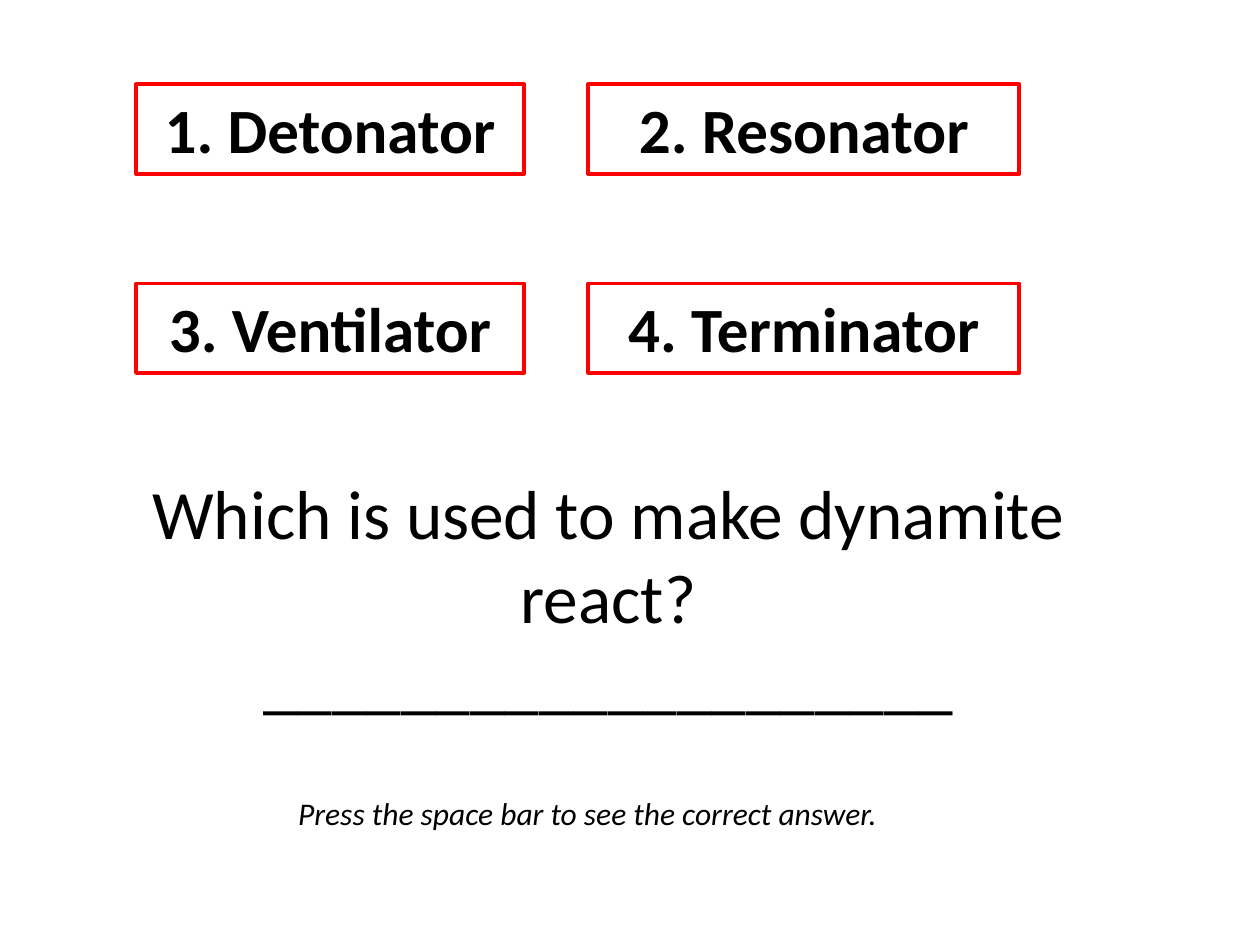
"""Build a quiz slide with four boxed answers, a question and a hint."""
from itertools import product

from pptx import Presentation
from pptx.dml.color import RGBColor
from pptx.enum.text import MSO_ANCHOR as Anchor, PP_ALIGN as Align
from pptx.util import Inches, Pt

BLACK = RGBColor(0, 0, 0)
RED = RGBColor(255, 0, 0)
FONT = "Calibri"

ANSWERS = ["1. Detonator", "2. Resonator", "3. Ventilator", "4. Terminator"]
QUESTION = "Which is used to make dynamite react?\n____________________"
HINT = "Press the space bar to see the correct answer."

ANSWER_COLUMNS = [(1.08, 3.08), (4.67, 3.42)]
ANSWER_ROWS = [0.67, 2.25]
ANSWER_HEIGHT = 0.71


def add_text(slide, text, left, top, width, height, size,
             bold=False, italic=False, anchor=Anchor.TOP, outline=None):
    shape = slide.shapes.add_textbox(
        Inches(left), Inches(top), Inches(width), Inches(height))
    if outline is not None:
        shape.line.color.rgb = outline
        shape.line.width = Pt(2.25)
    frame = shape.text_frame
    frame.word_wrap = True
    frame.vertical_anchor = anchor
    paragraph = frame.paragraphs[0]
    paragraph.text = text
    paragraph.alignment = Align.CENTER
    for run in paragraph.runs:
        font = run.font
        font.name = FONT
        font.size = Pt(size)
        font.bold = bold
        font.italic = italic
        font.color.rgb = BLACK
    return shape


def main():
    presentation = Presentation()
    presentation.slide_width = Inches(10)
    presentation.slide_height = Inches(7.5)
    slide = presentation.slides.add_slide(presentation.slide_layouts[6])

    add_text(slide, QUESTION, 0.58, 3.92, 8.5, 1.61, 39.6, anchor=Anchor.MIDDLE)
    for answer, (top, (left, width)) in zip(ANSWERS, product(ANSWER_ROWS, ANSWER_COLUMNS)):
        add_text(slide, answer, left, top, width, ANSWER_HEIGHT, 36,
                 bold=True, outline=RED)
    add_text(slide, HINT, 1.25, 6.25, 6.83, 0.4, 18, italic=True)

    presentation.save("out.pptx")


if __name__ == "__main__":
    main()
